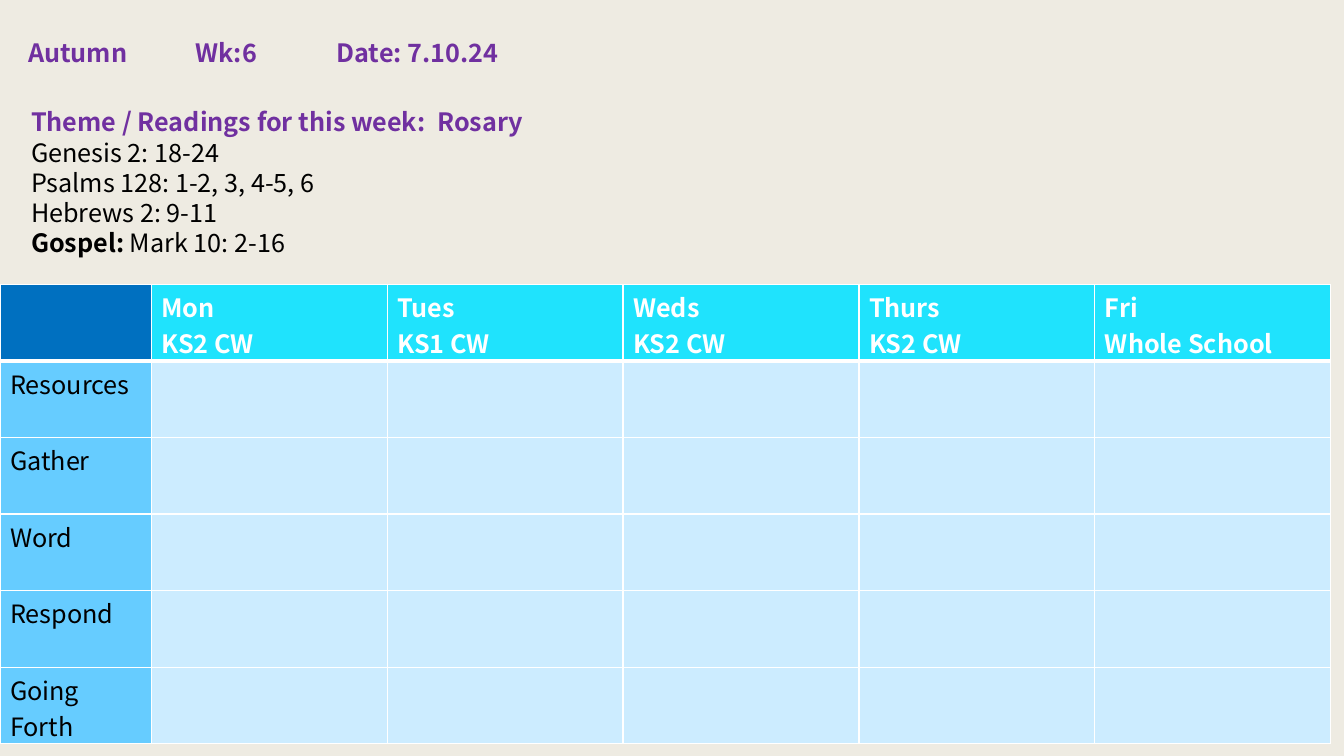
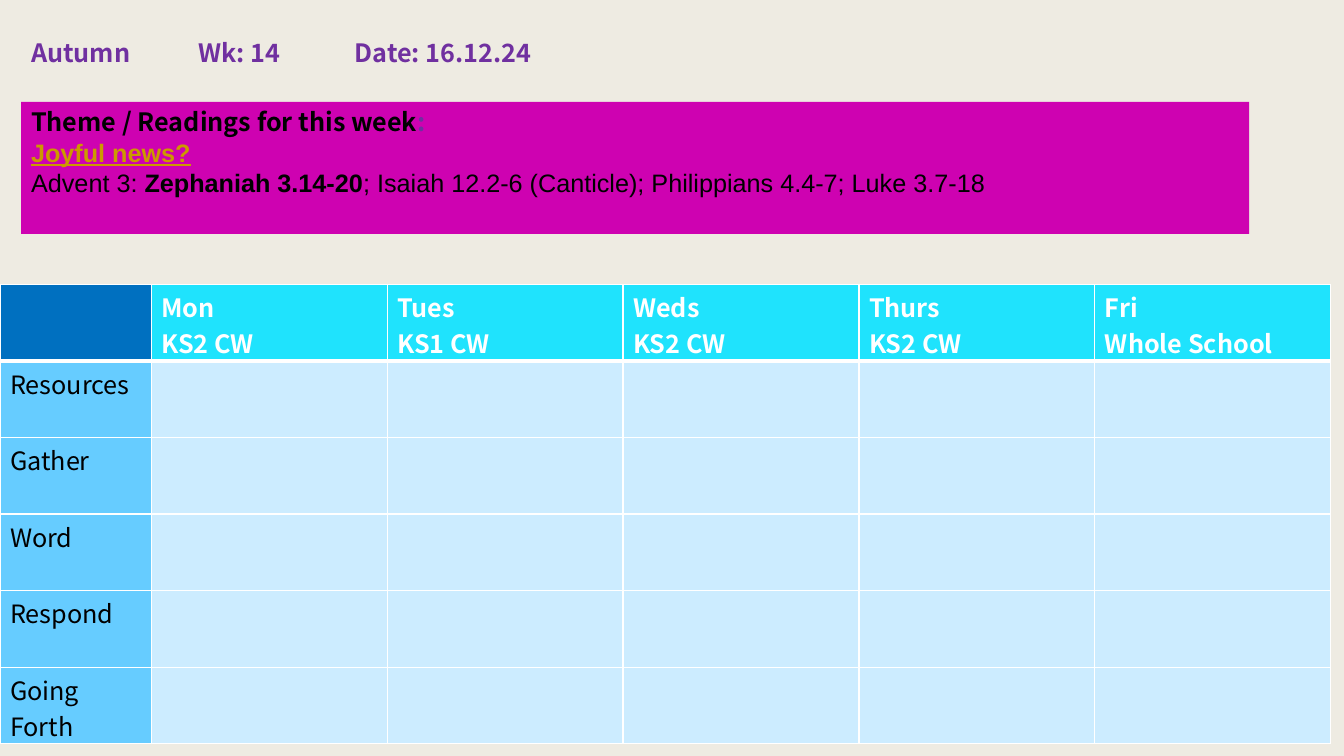
from dataclasses import dataclass
from typing import Optional

from lxml import etree
from pptx import Presentation
from pptx.dml.color import RGBColor
from pptx.enum import shapes, text
from pptx.oxml import ns
from pptx.util import Inches, Pt

# Shared look
CREAM = RGBColor(0xEE, 0xEB, 0xE2)
PURPLE = RGBColor(0x70, 0x30, 0xA0)
MAGENTA = RGBColor(0xCE, 0x02, 0xB1)
GOLD = RGBColor(0xCC, 0x99, 0x00)
BLACK = RGBColor(0x00, 0x00, 0x00)
WHITE = RGBColor(0xFF, 0xFF, 0xFF)
CORNER_BLUE = RGBColor(0x00, 0x70, 0xC0)
HEADER_CYAN = RGBColor(0x1F, 0xE3, 0xFD)
LABEL_BLUE = RGBColor(0x66, 0xCC, 0xFF)
BODY_BLUE = RGBColor(0xCC, 0xEC, 0xFF)
SANS, ARIAL = "Noto Sans CJK JP", "Arial"
LINE_SPACING = Pt(21.6)

# Planner grid
DAYS = [("Mon", "KS2 CW"), ("Tues", "KS1 CW"), ("Weds", "KS2 CW"),
        ("Thurs", "KS2 CW"), ("Fri", "Whole School")]
STAGES = ["Resources", "Gather", "Word", "Respond", "Going Forth"]
LABEL_WIDTH, DAY_WIDTH, ROW_HEIGHT = 1.5, 2.34, 0.76


@dataclass(frozen=True)
class Run:
    words: str
    color: RGBColor = BLACK
    bold: bool = False
    underline: bool = False
    font: str = SANS


Lines = list[list[Run]]


@dataclass(frozen=True)
class Week:
    heading: str
    heading_left: float
    heading_tabs: tuple[float, ...]
    theme: Lines
    theme_height: float
    theme_tabs: tuple[float, ...] = ()
    theme_fill: Optional[RGBColor] = None


WEEKS = [
    Week(
        heading="Autumn\tWk:6\tDate: 7.10.24",
        heading_left=0.18,
        heading_tabs=(1.66, 3.06),
        theme=[
            [Run("Theme / Readings for this week:\tRosary", PURPLE, bold=True)],
            [Run("Genesis 2: 18-24")],
            [Run("Psalms 128: 1-2, 3, 4-5, 6")],
            [Run("Hebrews 2: 9-11")],
            [Run("Gospel:", bold=True), Run(" Mark 10: 2-16")],
        ],
        theme_height=1.6,
        theme_tabs=(4.03,),
    ),
    Week(
        heading="Autumn\tWk: 14\tDate: 16.12.24",
        heading_left=0.21,
        heading_tabs=(1.66, 3.21),
        theme=[
            [Run("Theme / Readings for this week", bold=True),
             Run(":", PURPLE, bold=True)],
            [Run("Joyful news?", GOLD, bold=True, underline=True, font=ARIAL)],
            [Run("Advent 3: ", font=ARIAL),
             Run("Zephaniah 3.14-20", bold=True, font=ARIAL),
             Run("; Isaiah 12.2-6 (Canticle); Philippians 4.4-7; Luke 3.7-18",
                 font=ARIAL)],
        ],
        theme_height=1.31,
        theme_fill=MAGENTA,
    ),
]


def write_lines(frame, lines: Lines, spacing=None,
                tabs: tuple[float, ...] = ()) -> None:
    """Write one paragraph per line of runs."""
    for index, runs in enumerate(lines):
        paragraph = frame.paragraphs[0] if index == 0 else frame.add_paragraph()
        paragraph.alignment = text.PP_ALIGN.LEFT
        if spacing:
            paragraph.line_spacing = spacing
        if tabs and index == 0:
            properties = paragraph._p.get_or_add_pPr()
            tab_list = etree.SubElement(properties, ns.qn("a:tabLst"))
            for position in tabs:
                etree.SubElement(tab_list, ns.qn("a:tab"),
                                 pos=str(Inches(position)), algn="l")
        for item in runs:
            run = paragraph.add_run()
            run.text = item.words
            style = {"name": item.font, "size": Pt(18), "bold": item.bold,
                     "underline": item.underline}
            for attribute, value in style.items():
                setattr(run.font, attribute, value)
            run.font.color.rgb = item.color


def add_panel(slide, left: float, top: float, width: float, height: float,
              lines: Lines, tabs: tuple[float, ...],
              fill: Optional[RGBColor] = None) -> None:
    """Add a text box, or a filled rectangle when a fill is given."""
    box = [Inches(length) for length in (left, top, width, height)]
    if fill is None:
        shape = slide.shapes.add_textbox(*box)
    else:
        shape = slide.shapes.add_shape(shapes.MSO_SHAPE.RECTANGLE, *box)
        shape.shadow.inherit = False
        shape.fill.solid()
        shape.fill.fore_color.rgb = fill
        shape.line.fill.background()
    shape.text_frame.word_wrap = True
    shape.text_frame.vertical_anchor = text.MSO_ANCHOR.TOP
    write_lines(shape.text_frame, lines, LINE_SPACING, tabs)


def add_borders(cell, row: int) -> None:
    """Draw white borders, with a thicker rule below the header row."""
    widths = {"lnL": 1, "lnR": 1, "lnT": 3 if row == 1 else 1,
              "lnB": 3 if row == 0 else 1}
    properties = cell._tc.get_or_add_tcPr()
    for side, width in widths.items():
        line = etree.SubElement(properties, ns.qn(f"a:{side}"), w=str(Pt(width)))
        fill = etree.SubElement(line, ns.qn("a:solidFill"))
        etree.SubElement(fill, ns.qn("a:srgbClr"), val=str(WHITE))


def cell_content(row: int, column: int) -> tuple[RGBColor, Lines]:
    """Return the fill and the text of one planner cell."""
    if row == 0 and column == 0:
        return CORNER_BLUE, []
    if row == 0:
        return HEADER_CYAN, [[Run(words, WHITE, bold=True)]
                             for words in DAYS[column - 1]]
    if column == 0:
        return LABEL_BLUE, [[Run(STAGES[row - 1])]]
    return BODY_BLUE, []


def add_planner(slide) -> None:
    """Add the table of days against stages of worship."""
    rows, columns = len(STAGES) + 1, len(DAYS) + 1
    table = slide.shapes.add_table(
        rows, columns, Inches(0), Inches(2.82),
        Inches(LABEL_WIDTH + len(DAYS) * DAY_WIDTH),
        Inches(rows * ROW_HEIGHT)).table
    table.first_row = table.horz_banding = False
    for index, column in enumerate(table.columns):
        column.width = Inches(DAY_WIDTH if index else LABEL_WIDTH)
    for row in range(rows):
        table.rows[row].height = Inches(ROW_HEIGHT)
        for column in range(columns):
            cell = table.cell(row, column)
            color, lines = cell_content(row, column)
            cell.margin_top, cell.margin_bottom = Inches(0.04), Inches(0)
            add_borders(cell, row)
            cell.fill.solid()
            cell.fill.fore_color.rgb = color
            write_lines(cell.text_frame, lines)


def add_week(presentation, week: Week) -> None:
    slide = presentation.slides.add_slide(presentation.slide_layouts[6])
    # Term, week and date
    add_panel(slide, week.heading_left, 0.32, 12.98, 0.4,
              [[Run(week.heading, PURPLE, bold=True)]], week.heading_tabs)
    # Theme and readings
    add_panel(slide, 0.21, 1.01, 12.18, week.theme_height,
              week.theme, week.theme_tabs, week.theme_fill)
    add_planner(slide)


def main() -> None:
    presentation = Presentation()
    presentation.slide_width = Inches(13.33)
    presentation.slide_height = Inches(7.5)
    background = presentation.slide_master.background.fill
    background.solid()
    background.fore_color.rgb = CREAM
    for week in WEEKS:
        add_week(presentation, week)
    presentation.save("out.pptx")


if __name__ == "__main__":
    main()
